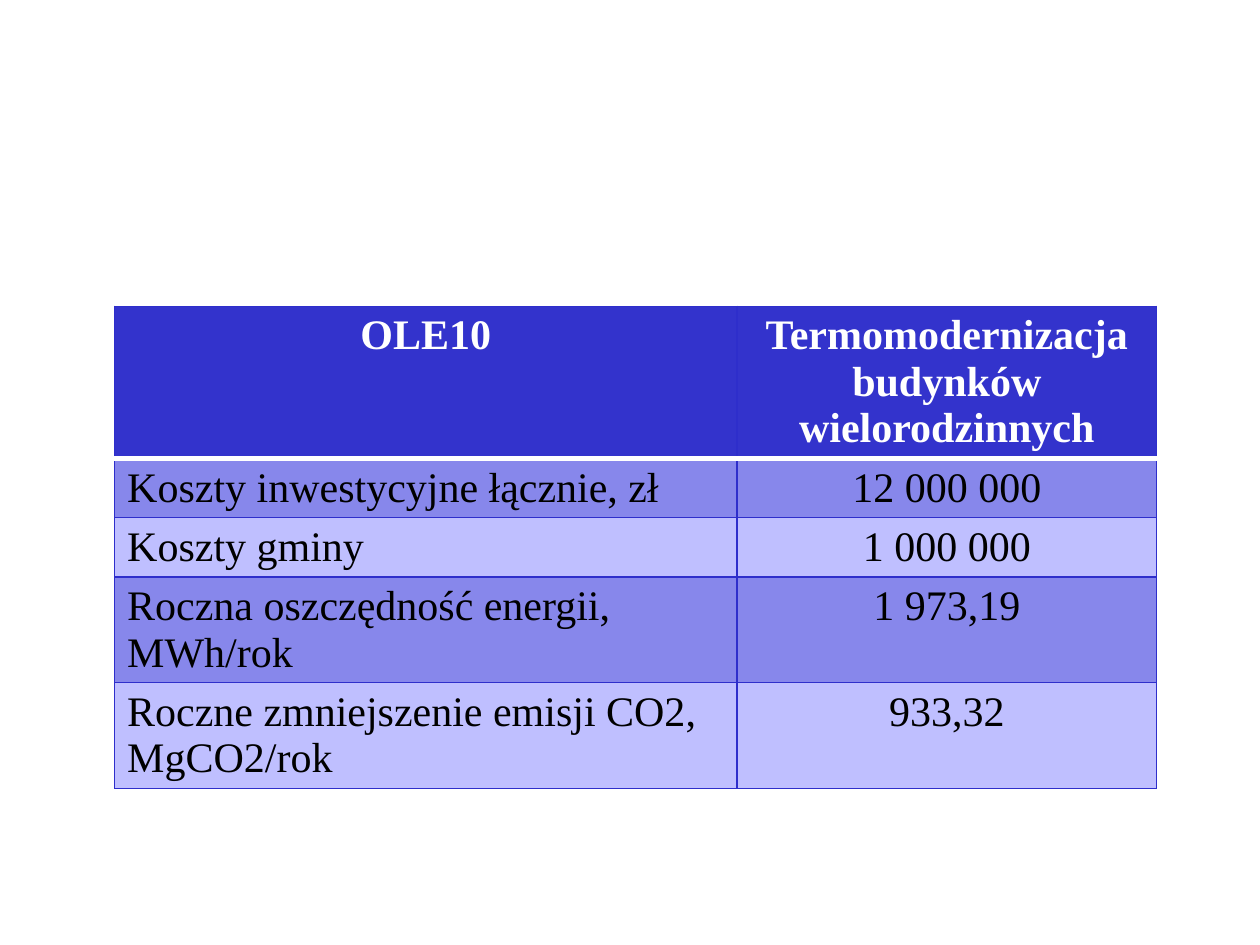
from typing import NamedTuple

from lxml.etree import SubElement
from pptx import Presentation
from pptx.dml.color import RGBColor
from pptx.enum.text import PP_ALIGN
from pptx.oxml.ns import qn
from pptx.table import _Cell
from pptx.util import Inches, Pt


class Border(NamedTuple):
    color: str
    width: float


class Row(NamedTuple):
    label: str
    value: str
    height: float


GRID = Border("2E2ECB", 0.75)
HEADER_RULE = Border("FFFFFF", 3)
HEADER_FILL = "3333CC"
BAND_FILLS = ("BFBFFF", "8787EB")
COLUMN_WIDTHS = (4.94, 3.33)
ROWS = (
    Row("OLE10", "Termomodernizacja budynków wielorodzinnych", 1.21),
    Row("Koszty inwestycyjne łącznie, zł", "12 000 000", 0.47),
    Row("Koszty gminy", "1 000 000", 0.47),
    Row("Roczna oszczędność energii, MWh/rok", "1 973,19", 0.84),
    Row("Roczne zmniejszenie emisji CO2, MgCO2/rok", "933,32", 0.84),
)


def color(value: str) -> RGBColor:
    return RGBColor.from_string(value)


def set_border(cell: _Cell, side: str, border: Border) -> None:
    properties = cell._tc.get_or_add_tcPr()
    line = SubElement(properties, qn(f"a:ln{side}"), w=str(Pt(border.width)))
    fill = SubElement(line, qn("a:solidFill"))
    SubElement(fill, qn("a:srgbClr"), val=border.color)


def format_cell(cell: _Cell, text: str, row_index: int, column_index: int) -> None:
    is_header = row_index == 0
    top = HEADER_RULE if row_index == 1 else GRID
    bottom = HEADER_RULE if is_header else GRID
    for side, border in (("L", GRID), ("R", GRID), ("T", top), ("B", bottom)):
        set_border(cell, side, border)
    cell.fill.solid()
    cell.fill.fore_color.rgb = color(HEADER_FILL if is_header else BAND_FILLS[row_index % 2])
    cell.text = text
    paragraph = cell.text_frame.paragraphs[0]
    is_label = column_index == 0 and not is_header
    paragraph.alignment = PP_ALIGN.LEFT if is_label else PP_ALIGN.CENTER
    paragraph.font.name = "Times New Roman"
    paragraph.font.size = Pt(24)
    paragraph.font.bold = is_header
    paragraph.font.color.rgb = color("FFFFFF" if is_header else "000000")


def main() -> None:
    presentation = Presentation()
    presentation.slide_width = Inches(10)
    presentation.slide_height = Inches(7.5)
    slide = presentation.slides.add_slide(presentation.slide_layouts[6])
    shape = slide.shapes.add_table(
        len(ROWS), len(COLUMN_WIDTHS), Inches(0.91), Inches(2.43),
        Inches(sum(COLUMN_WIDTHS)), Inches(sum(row.height for row in ROWS)),
    )
    table = shape.table
    for column, width in zip(table.columns, COLUMN_WIDTHS):
        column.width = Inches(width)
    for row_index, row in enumerate(ROWS):
        table.rows[row_index].height = Inches(row.height)
        for column_index, text in enumerate((row.label, row.value)):
            format_cell(table.cell(row_index, column_index), text, row_index, column_index)
    presentation.save("out.pptx")


if __name__ == "__main__":
    main()
